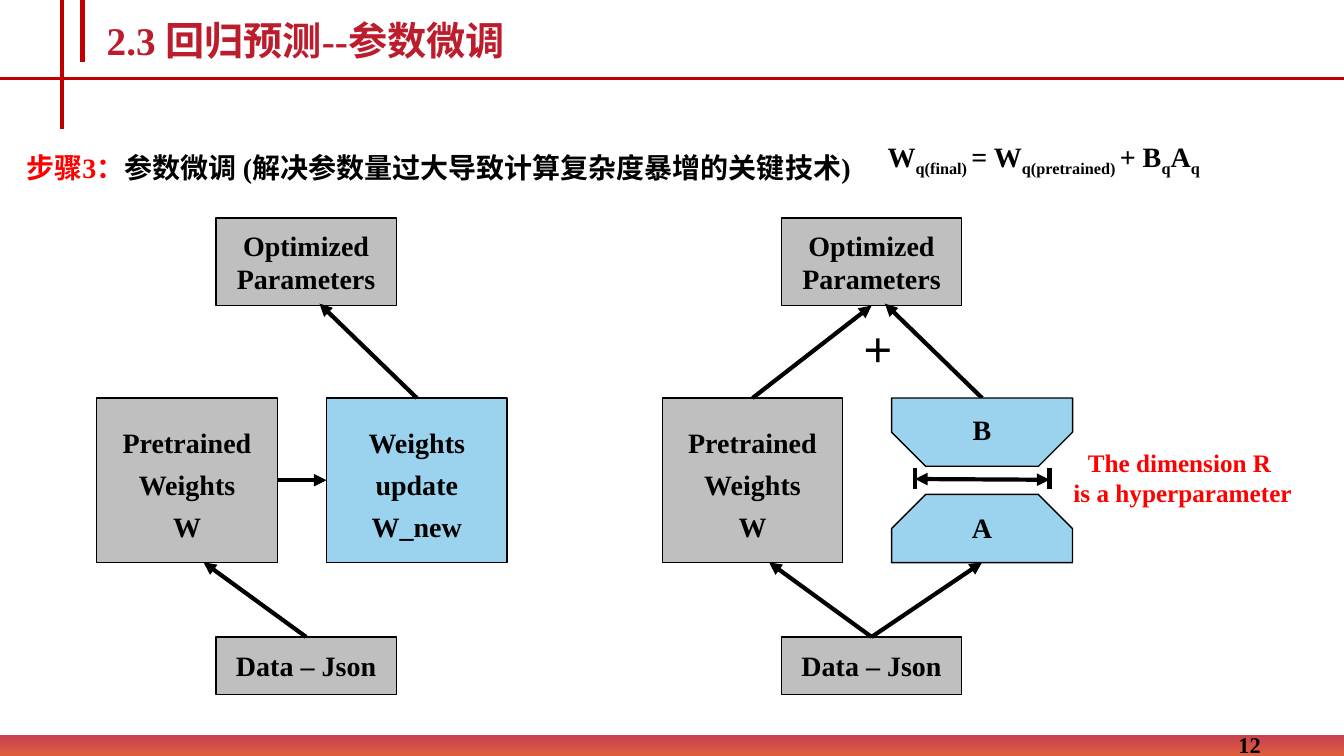
from lxml import etree
from pptx import Presentation
from pptx.dml.color import RGBColor
from pptx.enum.shapes import MSO_CONNECTOR, MSO_SHAPE
from pptx.enum.text import MSO_ANCHOR, PP_ALIGN
from pptx.oxml.ns import qn
from pptx.util import Cm, Pt

RECT, SNIPPED = MSO_SHAPE.RECTANGLE, MSO_SHAPE.SNIP_2_SAME_RECTANGLE
STRAIGHT = MSO_CONNECTOR.STRAIGHT
LEFT, CENTER, JUSTIFY = PP_ALIGN.LEFT, PP_ALIGN.CENTER, PP_ALIGN.JUSTIFY
TOP, MIDDLE = MSO_ANCHOR.TOP, MSO_ANCHOR.MIDDLE
SITE_TOP, SITE_LEFT, SITE_BOTTOM, SITE_RIGHT = range(4)

COLORS = {
    "black": "000000", "red": "FF0000", "rule": "C00000", "title": "BC1D2D",
    "ember": "E0522E", "frozen": "BFBFBF", "trained": "9BD3EF",
}
FONT = "Times New Roman"

prs = Presentation()
prs.slide_width, prs.slide_height = Cm(33.87), Cm(19.05)
slide = prs.slides.add_slide(prs.slide_layouts[6])
shapes = slide.shapes


def write(frame, *paragraphs, size=20, color="black", align=CENTER, anchor=TOP,
          spacing=None, wrap=True):
    """Fill a text frame; a paragraph is a string or a list of (text, color, baseline)."""
    frame.word_wrap = wrap
    frame.vertical_anchor = anchor
    for index, content in enumerate(paragraphs):
        paragraph = frame.add_paragraph() if index else frame.paragraphs[0]
        paragraph.alignment = align
        paragraph.line_spacing = spacing
        runs = [(content, color, 0)] if isinstance(content, str) else content
        for text, run_color, baseline in runs:
            run = paragraph.add_run()
            run.text = text
            run.font.name, run.font.size, run.font.bold = FONT, Pt(size), True
            run.font.color.rgb = RGBColor.from_string(COLORS[run_color])
            if baseline:
                run._r.get_or_add_rPr().set("baseline", str(baseline * 1000))


def draw_line(x1, y1, x2, y2, color="black", width=3, ends=(), start=None, end=None):
    """Draw a line in cm; ends names its arrowheads, start and end are (shape, site)."""
    line = shapes.add_connector(STRAIGHT, Cm(x1), Cm(y1), Cm(x2), Cm(y2))
    line.line.color.rgb = RGBColor.from_string(COLORS[color])
    line.line.width = Pt(width)
    for tag in ends:
        etree.SubElement(line.line._get_or_add_ln(), qn(f"a:{tag}"), type="triangle")
    etree.SubElement(line._element.spPr, qn("a:effectLst"))
    if start:
        line.begin_connect(*start)
    if end:
        line.end_connect(*end)


# Page frame
draw_line(1.57, 0, 1.57, 3.25, color="rule")
draw_line(2.08, 0, 2.08, 1.55, color="rule")
draw_line(0, 1.98, 33.87, 1.98, color="rule", width=2.25)

footer = shapes.add_shape(RECT, 0, Cm(18.54), prs.slide_width, Cm(0.51))
footer.shadow.inherit = False
footer.line.fill.background()
footer.fill.gradient()
footer.fill.gradient_angle = 270
for stop, shade in zip(footer.fill.gradient_stops, ("title", "ember")):
    stop.color.rgb = RGBColor.from_string(COLORS[shade])
for shade, opacity in zip(footer._element.spPr.iter(qn("a:srgbClr")), (83, 93)):
    etree.SubElement(shade, qn("a:alpha"), val=str(opacity * 1000))

# Diagram: both panels share the same frozen boxes
BOX_W, MIDDLE_Y, MIDDLE_H = 4.55, 10.03, 4.14
PANEL_STEP = 14.25
DATA_Y, OPTIMIZED_BOTTOM = 16.05, 7.7
MIDDLE_BOTTOM = MIDDLE_Y + MIDDLE_H

BOXES = {
    "data": (5.44, DATA_Y, 1.45, "frozen", ["Data – Json"], None),
    "pretrained": (2.44, MIDDLE_Y, MIDDLE_H, "frozen",
                   ["Pretrained", "Weights", "W"], Pt(30)),
    "optimized": (5.44, 5.49, 2.21, "frozen", ["Optimized Parameters"], None),
    "update": (8.23, MIDDLE_Y, MIDDLE_H, "trained",
               ["Weights", "update", "W_new"], Pt(30)),
}
for panel in range(2):
    shift = panel * PANEL_STEP
    box = {}
    for part, (x, y, height, fill, words, spacing) in BOXES.items():
        if panel and part == "update":
            continue
        box[part] = shapes.add_shape(RECT, Cm(x + shift), Cm(y), Cm(BOX_W), Cm(height))
        box[part].shadow.inherit = False
        box[part].fill.solid()
        box[part].fill.fore_color.rgb = RGBColor.from_string(COLORS[fill])
        box[part].line.color.rgb = RGBColor.from_string(COLORS["black"])
        box[part].line.width = Pt(1)
        write(box[part].text_frame, *words, anchor=MIDDLE, spacing=spacing)

    data_top = (box["data"], SITE_TOP)
    draw_line(7.72 + shift, DATA_Y, 5.13 + shift, MIDDLE_BOTTOM,
              ends=["tailEnd"], start=data_top)
    update_top = (box["update"], SITE_TOP) if not panel else None
    draw_line(10.5 + shift, MIDDLE_Y, 8.05 + shift, 7.65,
              ends=["tailEnd"], start=update_top)
    if panel:
        draw_line(4.72 + shift, MIDDLE_Y, 7.72 + shift, OPTIMIZED_BOTTOM, ends=["tailEnd"],
                  start=(box["pretrained"], SITE_TOP), end=(box["optimized"], SITE_BOTTOM))
        draw_line(7.72 + shift, DATA_Y, 24.75, MIDDLE_BOTTOM,
                  ends=["tailEnd"], start=data_top)
    else:
        draw_line(6.99, 12.1, 8.23, 12.1, ends=["tailEnd"],
                  start=(box["pretrained"], SITE_RIGHT), end=(box["update"], SITE_LEFT))

# Low-rank matrices B and A, and the dimension between them
for y, rotation in ((MIDDLE_Y, 180), (12.46, 0)):
    matrix = shapes.add_shape(SNIPPED, Cm(22.47), Cm(y), Cm(4.56), Cm(1.72))
    matrix.adjustments[0], matrix.adjustments[1] = 0.5, 0
    matrix.rotation = rotation
    matrix.shadow.inherit = False
    matrix.fill.solid()
    matrix.fill.fore_color.rgb = RGBColor.from_string(COLORS["trained"])
    matrix.line.color.rgb = RGBColor.from_string(COLORS["black"])
    matrix.line.width = Pt(1)

R_LEFT, R_RIGHT = 23.06, 26.45
for x in (R_LEFT, R_RIGHT):
    draw_line(x, 11.79, x, 12.32)
draw_line(R_LEFT, 12.07, R_RIGHT, 12.09, ends=["headEnd", "tailEnd"])

# Text
step = [("步骤3：", "red", 0),
        ("参数微调 (解决参数量过大导致计算复杂度暴增的关键技术)", "black", 0)]
formula = [(text, "black", baseline) for text, baseline in (
    ("W", 0), ("q(final) ", -25), ("= W", 0), ("q(pretrained) ", -25),
    ("+ B", 0), ("q", -25), ("A", 0), ("q", -25))]
LABELS = [
    (2.44, 0.3, 24.54, 1.55, ["2.3 回归预测--参数微调"],
     dict(size=28, color="title", align=LEFT, anchor=MIDDLE, spacing=0.9)),
    (30.96, 18.31, 1.96, 0.64, ["12"], dict(size=16, align=LEFT)),
    (0.41, 3.1, 33.46, 1.47, [step], dict(align=JUSTIFY, spacing=Pt(40))),
    (24.23, 12.75, 1.04, 1.12, ["A"], dict(wrap=False)),
    (24.25, 10.26, 1, 1.12, ["B"], dict(wrap=False)),
    (21.44, 8.2, 1.37, 1.27, ["＋"], dict(size=24, wrap=False)),
    (26.72, 11.15, 6.17, 1.8, ["The dimension R ", "is a hyperparameter"],
     dict(size=18, color="red", wrap=False)),
    (22.12, 3.4, 11.75, 1.12, [formula], dict(align=LEFT)),
]
for x, y, width, height, words, style in LABELS:
    label = shapes.add_textbox(Cm(x), Cm(y), Cm(width), Cm(height))
    write(label.text_frame, *words, **style)

prs.save("out.pptx")
